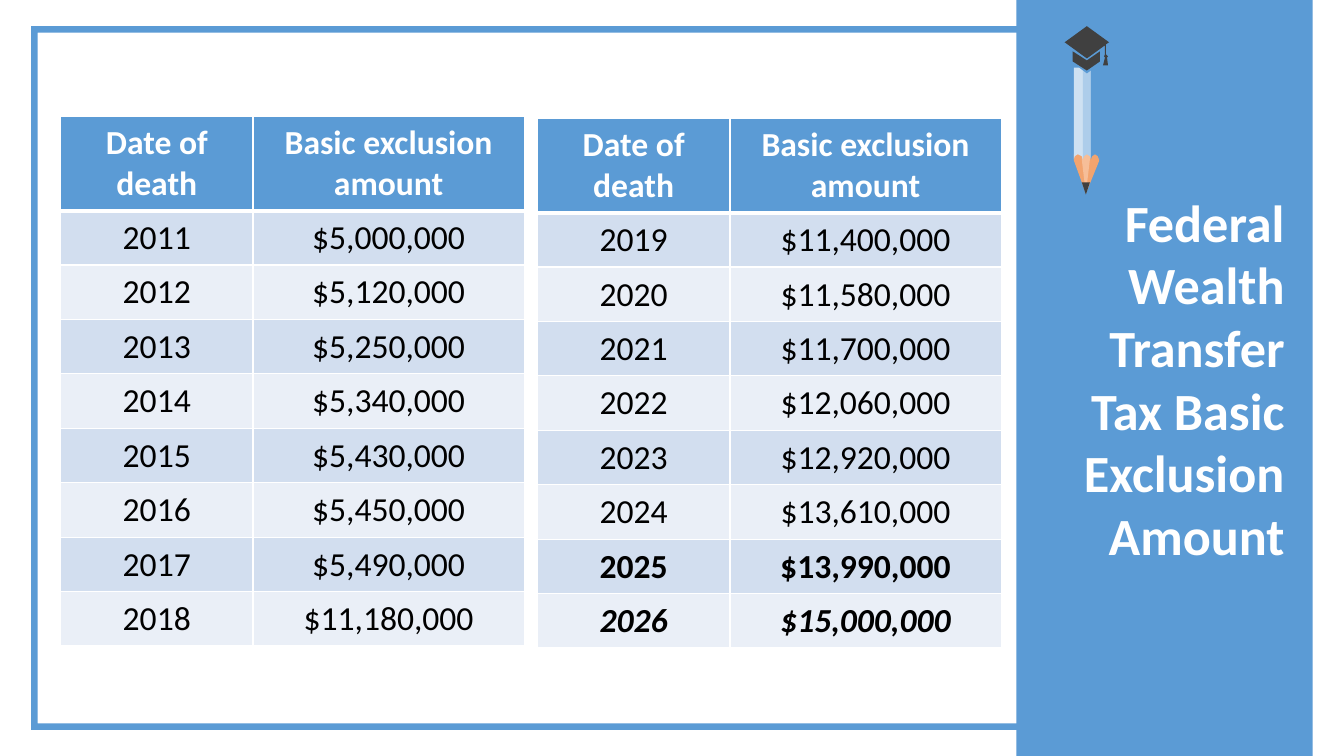
from lxml import etree
from pptx import Presentation
from pptx.dml.color import RGBColor
from pptx.enum.shapes import MSO_SHAPE as SHAPE
from pptx.enum.text import MSO_ANCHOR as ANCHOR, PP_ALIGN as ALIGN
from pptx.oxml.ns import qn
from pptx.util import Pt

PX = 9144  # 100 px to the inch
FONT = "Calibri"
BLUE = RGBColor(0x5B, 0x9B, 0xD5)
WHITE = RGBColor(0xFF, 0xFF, 0xFF)
BLACK = RGBColor(0x00, 0x00, 0x00)
BAND_DARK = RGBColor(0xD2, 0xDE, 0xEF)
BAND_LIGHT = RGBColor(0xEA, 0xEF, 0xF7)
GRAPHITE = RGBColor(0x40, 0x40, 0x40)
WOOD = RGBColor(0xF2, 0xA4, 0x6F)
WOOD_LIGHT = RGBColor(0xF6, 0xBE, 0x98)
PALE_BLUE = RGBColor(0xCE, 0xE1, 0xF2)
SOFT_BLUE = RGBColor(0xAD, 0xCD, 0xEA)

HEADER = ("Date of death", "Basic exclusion amount")
AMOUNTS_2011 = ("$5,000,000", "$5,120,000", "$5,250,000", "$5,340,000",
                "$5,430,000", "$5,450,000", "$5,490,000", "$11,180,000")
AMOUNTS_2019 = ("$11,400,000", "$11,580,000", "$11,700,000", "$12,060,000",
                "$12,920,000", "$13,610,000", "$13,990,000", "$15,000,000")


class Deck:
    def __init__(self, width, height):
        self.prs = Presentation()
        self.prs.slide_width, self.prs.slide_height = width * PX, height * PX
        self.slide = self.prs.slides.add_slide(self.prs.slide_layouts[6])
        self.shapes = self.slide.shapes

    def paint(self, sp, color):
        sp.shadow.inherit = False
        sp.fill.solid()
        sp.fill.fore_color.rgb = color
        sp.line.fill.background()
        return sp

    def shape(self, kind, box, color, parent=None):
        shapes = parent.shapes if parent else self.shapes
        return self.paint(shapes.add_shape(kind, *(v * PX for v in box)), color)

    def outline(self, parent, color, *contours):
        fb = parent.shapes.build_freeform(*contours[0][0], scale=PX)
        for i, (start, *points) in enumerate(contours):
            if i:
                fb.move_to(*start)
            fb.add_line_segments(points, close=True)
        return self.paint(fb.convert_to_shape(), color)

    def style_text(self, p, size, color, align, bold=False, italic=False):
        p.alignment = align
        for r in p.runs:
            font = r.font
            font.name, font.size, font.color.rgb = FONT, Pt(size), color
            font.bold, font.italic = bold, italic

    def title(self, box, text):
        tf = self.shapes.add_textbox(*(v * PX for v in box)).text_frame
        tf.word_wrap = True
        tf.vertical_anchor = ANCHOR.MIDDLE
        tf.text = text
        p = tf.paragraphs[0]
        p.space_before = Pt(7)
        self.style_text(p, 37.3, WHITE, ALIGN.RIGHT, bold=True)

    def borders(self, cell, top, bottom):
        tc_pr = cell._tc.get_or_add_tcPr()
        for tag, width in (("lnL", 1), ("lnR", 1), ("lnT", top), ("lnB", bottom)):
            ln = etree.SubElement(tc_pr, qn("a:" + tag), w=str(Pt(width)))
            fill = etree.SubElement(ln, qn("a:solidFill"))
            etree.SubElement(fill, qn("a:srgbClr"), val=str(WHITE))

    def table(self, x, y, widths, heights, rows, emphasis):
        table = self.shapes.add_table(len(rows), len(widths), x * PX, y * PX,
                                      sum(widths) * PX, sum(heights) * PX).table
        for col, width in zip(table.columns, widths):
            col.width = width * PX
        for i, (row, height, texts) in enumerate(zip(table.rows, heights, rows)):
            row.height = height * PX
            fill = BLUE if i == 0 else BAND_DARK if i % 2 else BAND_LIGHT
            bold, italic = emphasis.get(texts[0], (i == 0, False))
            for cell, text in zip(row.cells, texts):
                self.borders(cell, 3 if i == 1 else 1, 3 if i == 0 else 1)
                cell.fill.solid()
                cell.fill.fore_color.rgb = fill
                cell.margin_left = cell.margin_right = 13 * PX
                cell.margin_top = cell.margin_bottom = 7 * PX
                cell.text = text
                self.style_text(cell.text_frame.paragraphs[0], 24,
                                BLACK if i else WHITE, ALIGN.CENTER, bold, italic)


def stave(left, right, top):
    """One long side of the pencil, ending in a scallop."""
    mid = (left + right) // 2
    return top + [(right, 158), (right - 1, 155), (mid, 153),
                  (left + 1, 155), (left, 158)]


def main():
    deck = Deck(1333, 750)

    # Frame, side panel and title
    frame = deck.shape(SHAPE.FRAME, (31, 26, 1270, 698), BLUE)
    frame.adjustments[0] = 0.009
    deck.shape(SHAPE.RECTANGLE, (1008, 0, 294, 750), BLUE)
    deck.title((1033, 26, 251, 698),
               "Federal Wealth Transfer Tax Basic Exclusion Amount")

    # Pencil with graduation cap
    pencil = deck.shapes.add_group_shape()
    deck.outline(pencil, WOOD, [(1065, 153), (1090, 153), (1090, 160),
                                (1077, 192), (1065, 159)])
    deck.outline(pencil, WOOD_LIGHT, [(1073, 153), (1081, 153), (1081, 158),
                                      (1077, 192), (1073, 159)])
    for color, left, right, top in (
            (PALE_BLUE, 1065, 1074, [(1065, 67), (1070, 67), (1074, 70)]),
            (SOFT_BLUE, 1074, 1082, [(1074, 70), (1078, 73), (1082, 70)]),
            (BLUE, 1082, 1090, [(1082, 70), (1086, 67), (1090, 67)])):
        deck.outline(pencil, color, stave(left, right, top))
    lead = deck.shape(SHAPE.ISOSCELES_TRIANGLE, (1073, 181, 8, 12), GRAPHITE, pencil)
    lead.rotation = 180
    deck.outline(pencil, GRAPHITE,
                 [(1064, 51), (1078, 60), (1091, 51), (1091, 61), (1078, 70), (1064, 61)],
                 [(1078, 26), (1100, 42), (1097, 44), (1097, 54), (1099, 56), (1098, 57),
                  (1099, 65), (1094, 65), (1096, 57), (1095, 56), (1096, 54), (1096, 45),
                  (1078, 58), (1056, 42)])

    # Exclusion amounts by year
    emphasis = {"2025": (True, False), "2026": (True, True)}
    for x, y, first_year, amounts in ((60, 115, 2011, AMOUNTS_2011),
                                      (533, 117, 2019, AMOUNTS_2019)):
        rows = [HEADER] + [(str(first_year + i), a) for i, a in enumerate(amounts)]
        deck.table(x, y, (191, 269), [94] + [54] * len(amounts), rows, emphasis)

    deck.prs.save("out.pptx")


if __name__ == "__main__":
    main()
